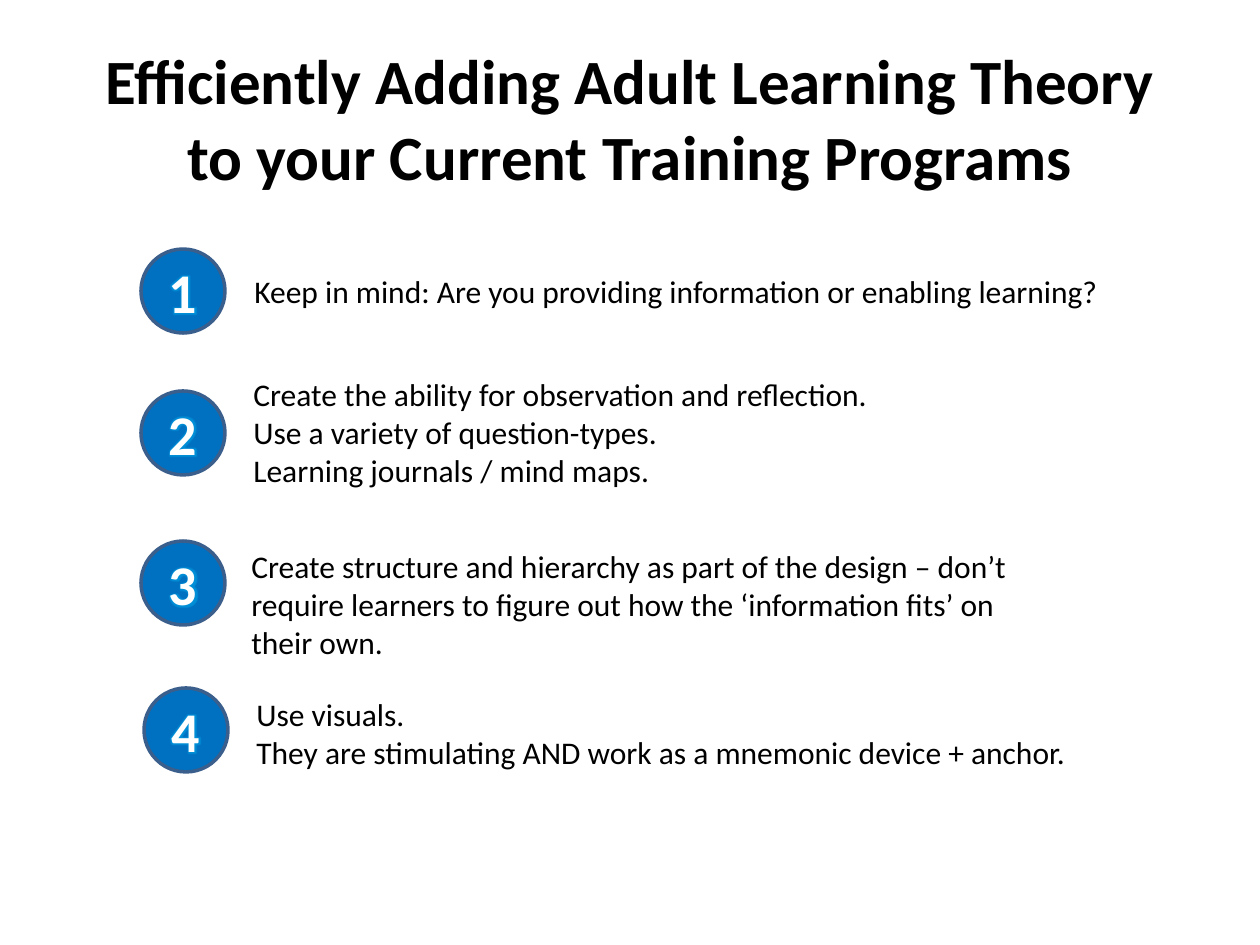
from lxml.etree import SubElement
from pptx import Presentation
from pptx.dml.color import RGBColor
from pptx.enum.shapes import MSO_SHAPE
from pptx.enum.text import MSO_ANCHOR, PP_ALIGN
from pptx.oxml.ns import qn
from pptx.util import Emu, Pt

SCALE = 914400 / 126
FONT = "Calibri"
DISC = 84
COLORS = {"text": "000000", "disc": "0070C0", "edge": "3A5F8C",
          "digit": "FFFFFF", "glow": "00B0F0"}

STEPS = [
    ((141, 249), (101, 17, 881, 50),
     ["Keep in mind: Are you providing information or enabling learning?"]),
    ((141, 391), (100, -22, 786, 127),
     ["Create the ability for observation and reflection.",
      "Use a variety of question-types.",
      "Learning journals / mind maps."]),
    ((141, 541), (98, 0, 832, 127),
     ["Create structure and hierarchy as part of the design – don’t "
      "require learners to figure out how the ‘information fits’ on their own."]),
    ((144, 688), (100, 1, 858, 89),
     ["Use visuals.",
      "They are stimulating AND work as a mnemonic device + anchor."]),
]


def px(*sizes):
    return [Emu(round(size * SCALE)) for size in sizes]


def color(name):
    return RGBColor.from_string(COLORS[name])


def add_run(para, text, size, name, bold=False):
    run = para.add_run()
    run.text = text
    run.font.size = Pt(size)
    run.font.bold = bold
    run.font.color.rgb = color(name)
    run.font.name = FONT
    return run


def add_text(slide, box, lines, size, bold=False, align=PP_ALIGN.LEFT,
             anchor=MSO_ANCHOR.TOP):
    frame = slide.shapes.add_textbox(*px(*box)).text_frame
    frame.word_wrap = True
    frame.vertical_anchor = anchor
    for i, line in enumerate(lines):
        para = frame.add_paragraph() if i else frame.paragraphs[0]
        para.alignment = align
        add_run(para, line, size, "text", bold)


def add_glow(run):
    props = run.font._element
    effect = SubElement(props, qn("a:effectLst"))
    glow = SubElement(effect, qn("a:glow"), rad=str(Pt(4)))
    tint = SubElement(glow, qn("a:srgbClr"), val=COLORS["glow"])
    SubElement(tint, qn("a:alpha"), val="50000")
    props.find(qn("a:solidFill")).addnext(effect)


def add_disc(slide, left, top, digit):
    disc = slide.shapes.add_shape(MSO_SHAPE.OVAL, *px(left, top, DISC, DISC))
    disc.shadow.inherit = False
    disc.fill.solid()
    disc.fill.fore_color.rgb = color("disc")
    disc.line.color.rgb = color("edge")
    disc.line.width = Pt(2)
    frame = disc.text_frame
    frame.vertical_anchor = MSO_ANCHOR.MIDDLE
    para = frame.paragraphs[0]
    para.alignment = PP_ALIGN.CENTER
    add_glow(add_run(para, digit, 32, "digit", True))


def add_step(slide, spot, box, digit, lines):
    left, top = spot
    dx, dy, width, height = box
    add_text(slide, (left + dx, top + dy, width, height), lines, 18)
    add_disc(slide, left, top, digit)


def add_title(slide, box):
    add_text(slide, box,
             ["Efficiently Adding Adult Learning Theory "
              "to your Current Training Programs"],
             36, True, PP_ALIGN.CENTER, MSO_ANCHOR.MIDDLE)


def main():
    deck = Presentation()
    deck.slide_width, deck.slide_height = px(1260, 945)
    slide = deck.slides.add_slide(deck.slide_layouts[6])
    add_title(slide, (63, 38, 1134, 158))
    for num, (spot, box, lines) in enumerate(STEPS, 1):
        add_step(slide, spot, box, str(num), lines)
    deck.save("out.pptx")


if __name__ == "__main__":
    main()
